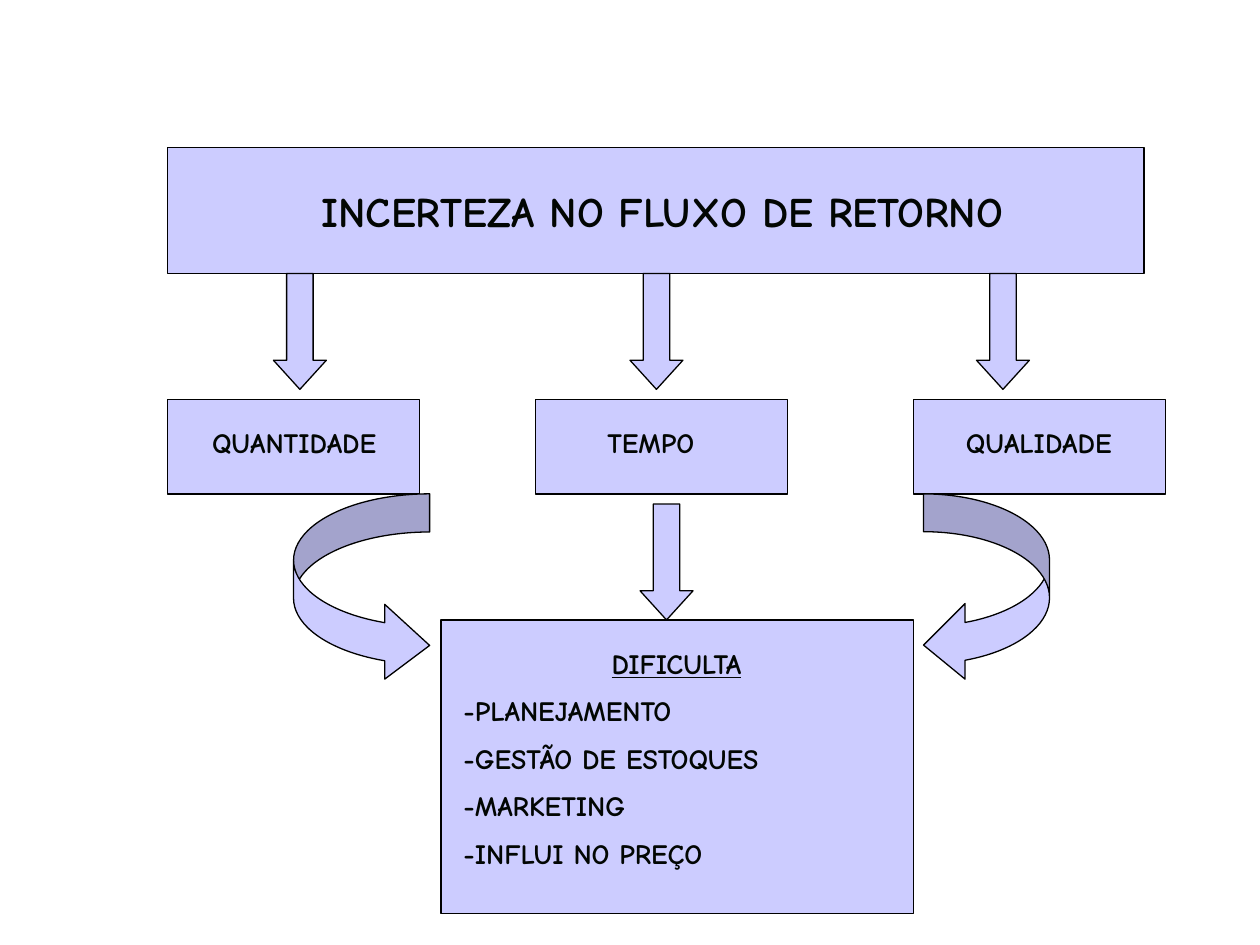
from dataclasses import dataclass

from pptx import Presentation
from pptx.dml.color import RGBColor as RGB
from pptx.enum.shapes import MSO_SHAPE as SHAPE
from pptx.enum.text import PP_ALIGN as ALIGN
from pptx.util import Inches, Pt

# Content
TITLE = "INCERTEZA NO FLUXO DE RETORNO"
# label, box left, label left, left of the arrow above
CAUSES = [
    ("QUANTIDADE", 1.33, 1.42, 2.17),
    ("TEMPO", 4.25, 4.25, 5),
    ("QUALIDADE", 7.25, 7.33, 7.75),
]
EFFECT = "DIFICULTA"
EFFECTS = ["PLANEJAMENTO", "GESTÃO DE ESTOQUES", "MARKETING", "INFLUI NO PREÇO"]


@dataclass(frozen=True)
class Theme:
    font: str = "Comic Neue"
    fill: RGB = RGB(0xCC, 0xCC, 0xFF)
    line: RGB = RGB(0, 0, 0)
    text: RGB = RGB(0x02, 0x06, 0x03)
    line_width: float = 0.75
    title: int = 24
    body: int = 16


theme = Theme()
prs = Presentation()
prs.slide_width, prs.slide_height = Inches(10), Inches(7.5)
s = prs.slides.add_slide(prs.slide_layouts[6])


def add_shape(kind, x, y, w, h, adjustments=()):
    sp = s.shapes.add_shape(kind, Inches(x), Inches(y), Inches(w), Inches(h))
    sp.shadow.inherit = False
    sp.fill.solid()
    sp.fill.fore_color.rgb = theme.fill
    sp.line.color.rgb = theme.line
    sp.line.width = Pt(theme.line_width)
    for i, value in enumerate(adjustments):
        sp.adjustments[i] = value


def down_arrow(x, y):
    add_shape(SHAPE.DOWN_ARROW, x, y, 0.42, 0.92, (0.5, 0.55))


def add_paragraph(p, text, size=theme.body, align=ALIGN.LEFT, underline=False, before=0):
    p.alignment = align
    p.space_before = Pt(before)
    r = p.add_run()
    r.text = text
    f = r.font
    f.name, f.size, f.bold, f.underline = theme.font, Pt(size), True, underline
    f.color.rgb = theme.text


def add_label(text, x, y, w, h, **fmt):
    tf = s.shapes.add_textbox(Inches(x), Inches(y), Inches(w), Inches(h)).text_frame
    tf.word_wrap = True
    add_paragraph(tf.paragraphs[0], text, align=ALIGN.CENTER, **fmt)
    return tf


# Title banner
add_shape(SHAPE.RECTANGLE, 1.33, 1.17, 7.75, 1)
add_label(TITLE, 1.67, 1.42, 7.17, 0.5, size=theme.title)

# Three causes, each under its arrow
for label, box_x, label_x, arrow_x in CAUSES:
    down_arrow(arrow_x, 2.17)
    add_shape(SHAPE.RECTANGLE, box_x, 3.17, 2, 0.75)
    add_label(label, label_x, 3.33, 1.83, 0.37)

# Arrows leading to the effects
add_shape(SHAPE.CURVED_RIGHT_ARROW, 2.33, 3.92, 1.08, 1.5, (0.28, 0.55, 0.33))
add_shape(SHAPE.CURVED_LEFT_ARROW, 7.33, 3.92, 1, 1.5, (0.3, 0.6, 0.33))

# Effects box
add_shape(SHAPE.RECTANGLE, 3.5, 4.92, 3.75, 2.33)
down_arrow(5.08, 4)
tf = add_label(EFFECT, 3.58, 5.08, 3.58, 2.37, underline=True)
for item in EFFECTS:
    add_paragraph(tf.add_paragraph(), f"-{item}", before=theme.body / 2)

prs.save("out.pptx")
